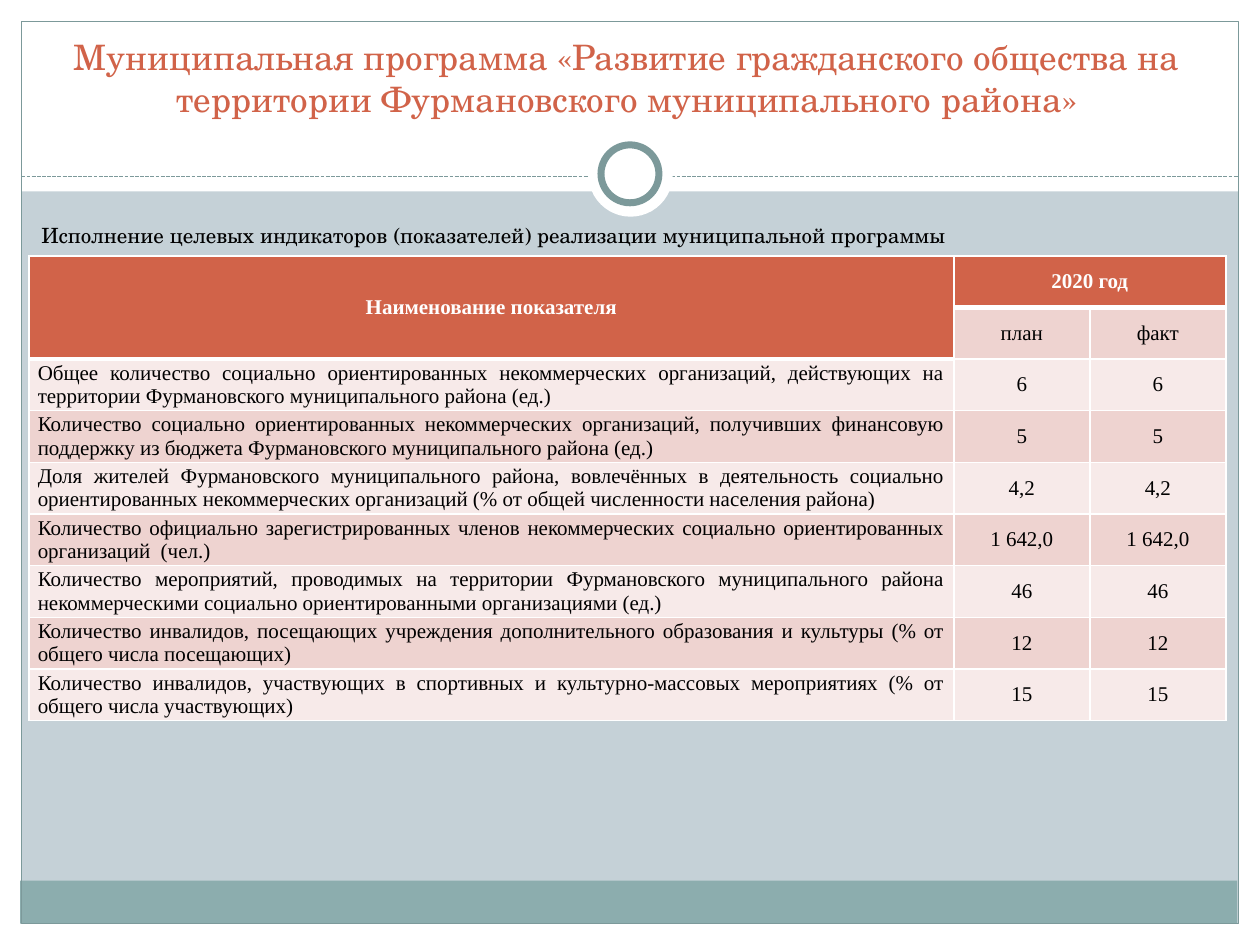
from lxml import etree
from pptx import Presentation
from pptx.dml.color import RGBColor
from pptx.enum.dml import MSO_LINE
from pptx.enum.shapes import MSO_CONNECTOR, MSO_SHAPE
from pptx.enum.text import MSO_ANCHOR, PP_ALIGN
from pptx.oxml.ns import qn
from pptx.util import Inches, Pt

RECT, OVAL = MSO_SHAPE.RECTANGLE, MSO_SHAPE.OVAL
STRAIGHT = MSO_CONNECTOR.STRAIGHT
DASH = MSO_LINE.SQUARE_DOT
LEFT, CENTER, JUSTIFY = PP_ALIGN.LEFT, PP_ALIGN.CENTER, PP_ALIGN.JUSTIFY
TOP, MIDDLE, BOTTOM = MSO_ANCHOR.TOP, MSO_ANCHOR.MIDDLE, MSO_ANCHOR.BOTTOM

THEME = {
    "background": RGBColor.from_string("C5D1D7"),
    "white": RGBColor.from_string("FFFFFF"),
    "black": RGBColor.from_string("000000"),
    "accent": RGBColor.from_string("D16349"),
    "frame": RGBColor.from_string("7C999A"),
    "band": RGBColor.from_string("8CADAE"),
    "row_dark": RGBColor.from_string("EED3D0"),
    "row_light": RGBColor.from_string("F7EAE9"),
    "heading_font": "TeX Gyre Schola",
    "table_font": "Times New Roman",
    "title_size": Pt(20),
    "text_size": Pt(12),
}

INDICATORS = [
    ("Общее количество социально ориентированных некоммерческих организаций, "
     "действующих на территории Фурмановского муниципального района (ед.)", "6", "6"),
    ("Количество социально ориентированных некоммерческих организаций, получивших "
     "финансовую поддержку из бюджета Фурмановского муниципального района (ед.)", "5", "5"),
    ("Доля жителей Фурмановского муниципального района, вовлечённых в деятельность "
     "социально ориентированных некоммерческих организаций "
     "(% от общей численности населения района)", "4,2", "4,2"),
    ("Количество официально зарегистрированных членов некоммерческих социально "
     "ориентированных организаций  (чел.)", "1 642,0", "1 642,0"),
    ("Количество мероприятий, проводимых на территории Фурмановского муниципального "
     "района некоммерческими социально ориентированными организациями (ед.)", "46", "46"),
    ("Количество инвалидов, посещающих учреждения дополнительного образования и "
     "культуры (% от общего числа посещающих)", "12", "12"),
    ("Количество инвалидов, участвующих в спортивных и культурно-массовых "
     "мероприятиях (% от общего числа участвующих)", "15", "15"),
]


def write(tf, text, font, size, color, align, bold=False):
    p = tf.paragraphs[0]
    p.alignment = align
    r = p.add_run()
    r.text = text
    r.font.name = font
    r.font.size = size
    r.font.bold = bold
    r.font.color.rgb = color
    return p


def set_borders(cell, bottom_width):
    tc_pr = cell._tc.get_or_add_tcPr()
    for side, width in (("L", 1), ("R", 1), ("T", 1), ("B", bottom_width)):
        ln = etree.SubElement(tc_pr, qn(f"a:ln{side}"), w=str(Pt(width)))
        fill = etree.SubElement(ln, qn("a:solidFill"))
        etree.SubElement(fill, qn("a:srgbClr"), val=str(THEME["white"]))


prs = Presentation()
prs.slide_width, prs.slide_height = Inches(10), Inches(7.5)
s = prs.slides.add_slide(prs.slide_layouts[5])
s.background.fill.solid()
s.background.fill.fore_color.rgb = THEME["background"]

# Margins, header, footer band and frame
for left, top, width, height, fill, line in (
    (0, 7.33, 10, 0.17, "white", None),
    (0, 0, 10, 1.52, "white", None),
    (0, 0, 0.17, 7.5, "white", None),
    (9.83, 0, 0.17, 7.5, "white", None),
    (0.16, 6.99, 9.66, 0.34, "band", None),
    (0.17, 0.17, 9.66, 7.16, None, "frame"),
):
    sp = s.shapes.add_shape(RECT, Inches(left), Inches(top), Inches(width), Inches(height))
    sp.shadow.inherit = False
    if fill:
        sp.fill.solid()
        sp.fill.fore_color.rgb = THEME[fill]
    else:
        sp.fill.background()
    if line:
        sp.line.color.rgb = THEME[line]
        sp.line.width = Pt(0.75)
    else:
        sp.line.fill.background()

# Dashed divider
divider = s.shapes.add_connector(STRAIGHT, Inches(0.17), Inches(1.4), Inches(9.83), Inches(1.4))
divider.line.color.rgb = THEME["frame"]
divider.line.width = Pt(0.75)
divider.line.dash_style = DASH
etree.SubElement(divider._element.spPr, qn("a:effectLst"))

# Ring on the divider
for left, top, size, line_width in ((4.67, 1.05, 0.67, 0), (4.77, 1.15, 0.46, 4)):
    sp = s.shapes.add_shape(OVAL, Inches(left), Inches(top), Inches(size), Inches(size))
    sp.shadow.inherit = False
    sp.fill.solid()
    sp.fill.fore_color.rgb = THEME["white"]
    if line_width:
        sp.line.color.rgb = THEME["frame"]
        sp.line.width = Pt(line_width)
    else:
        sp.line.fill.background()

# Title, brought in front of the header
title = s.shapes.title
s.shapes.element.append(title.element)
title.left, title.top = Inches(0.31), Inches(0.47)
title.width, title.height = Inches(9.33), Inches(0.53)
tf = title.text_frame
tf.word_wrap = True
tf.vertical_anchor = BOTTOM
write(tf, "Муниципальная программа «Развитие гражданского общества на "
      "территории Фурмановского муниципального района»",
      THEME["heading_font"], THEME["title_size"], THEME["accent"], CENTER)

# Table caption
caption = s.shapes.add_textbox(Inches(0.23), Inches(1.72), Inches(9.3), Inches(0.39))
tf = caption.text_frame
tf.word_wrap = True
tf.vertical_anchor = TOP
write(tf, "Исполнение целевых индикаторов (показателей) реализации муниципальной программы",
      THEME["heading_font"], THEME["text_size"], THEME["black"], LEFT)

# Indicator table
rows = [("Наименование показателя", "2020 год", ""), ("", "план", "факт")] + INDICATORS
table = s.shapes.add_table(len(rows), 3, Inches(0.23), Inches(2.03),
                           Inches(9.5), Inches(3.65)).table
for col, width in zip(table.columns, (7.34, 1.08, 1.08)):
    col.width = Inches(width)
table.cell(0, 0).merge(table.cell(1, 0))
table.cell(0, 1).merge(table.cell(0, 2))

for i, values in enumerate(rows):
    table.rows[i].height = Inches(0.41)
    for j, text in enumerate(values):
        cell = table.cell(i, j)
        header = i == 0 or (i == 1 and j == 0)
        set_borders(cell, 3 if header else 1)
        cell.fill.solid()
        band = "row_dark" if i % 2 else "row_light"
        cell.fill.fore_color.rgb = THEME["accent" if header else band]
        cell.vertical_anchor = MIDDLE
        cell.margin_left = cell.margin_right = Inches(0.07)
        cell.margin_top = cell.margin_bottom = 0
        if text:
            write(cell.text_frame, text, THEME["table_font"], THEME["text_size"],
                  THEME["white" if header else "black"],
                  JUSTIFY if i > 1 and j == 0 else CENTER, bold=header)

prs.save("out.pptx")
